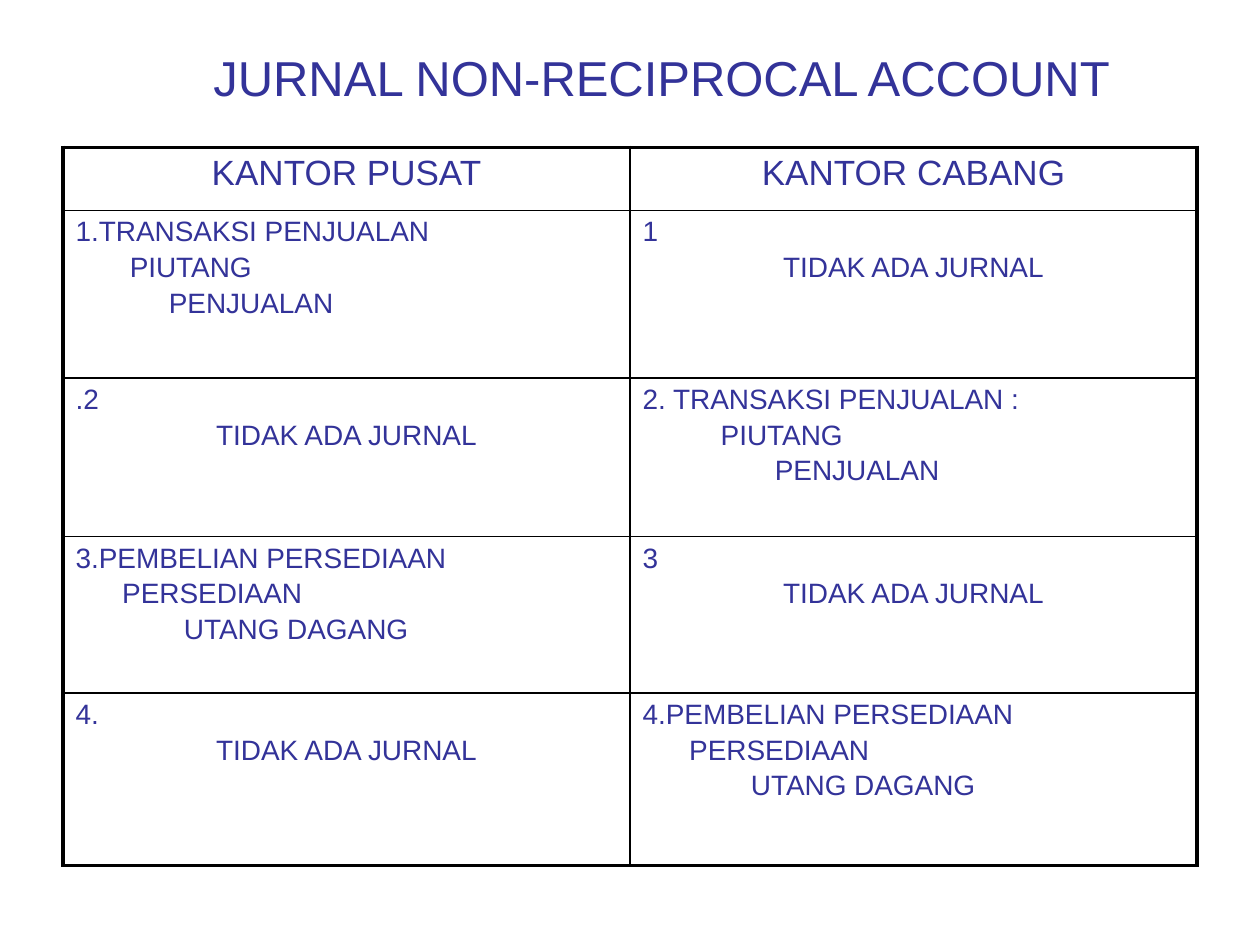
from dataclasses import dataclass

from lxml import etree
from pptx import Presentation
from pptx import util as u
from pptx.dml.color import RGBColor
from pptx.enum import text
from pptx.oxml import ns

INK = "333399"
BORDER = "000000"
FONT = "Arial"
OUTER, INNER = 2.25, 1
COLUMN_WIDTH = 4.5
ROW_HEIGHTS = (0.5, 1.33, 1.26, 1.24, 1.37)


@dataclass(frozen=True)
class Line:
    words: str
    indent: float = 0
    centered: bool = False
    size: int = 16


def header(words: str) -> list[Line]:
    return [Line(words, centered=True, size=20)]


def no_journal(number: str) -> list[Line]:
    return [Line(number), Line("TIDAK ADA JURNAL", centered=True)]


def sale(heading: str, debit_indent: float, credit_indent: float) -> list[Line]:
    return [Line(heading), Line("PIUTANG", debit_indent), Line("PENJUALAN", credit_indent)]


def purchase(heading: str) -> list[Line]:
    return [Line(heading), Line("PERSEDIAAN", 0.37), Line("UTANG DAGANG", 0.86)]


JOURNAL = [
    (header("KANTOR PUSAT"), header("KANTOR CABANG")),
    (sale("1.TRANSAKSI PENJUALAN", 0.43, 0.74), no_journal("1")),
    (no_journal(".2"), sale("2. TRANSAKSI PENJUALAN :", 0.62, 1.05)),
    (purchase("3.PEMBELIAN PERSEDIAAN"), no_journal("3")),
    (no_journal("4."), purchase("4.PEMBELIAN PERSEDIAAN")),
]


def color(value: str) -> RGBColor:
    return RGBColor.from_string(value)


def add_span(para, words: str, size: int) -> None:
    span = para.add_run()
    span.text = words
    span.font.name = FONT
    span.font.size = u.Pt(size)
    span.font.bold = False
    span.font.color.rgb = color(INK)


def write_cell(cell, lines: list[Line]) -> None:
    frame = cell.text_frame
    for index, line in enumerate(lines):
        para = frame.add_paragraph() if index else frame.paragraphs[0]
        para.alignment = text.PP_ALIGN.CENTER if line.centered else text.PP_ALIGN.LEFT
        if index:
            para.space_before = u.Pt(2.6)
        if line.indent:
            para._p.get_or_add_pPr().set("marL", str(u.Inches(line.indent)))
        add_span(para, line.words, line.size)


def set_borders(cell, widths: dict[str, float]) -> None:
    """Draw the sides L, R, T and B, in that order, with widths in points."""
    properties = cell._tc.get_or_add_tcPr()
    for side, width in widths.items():
        edge = etree.SubElement(properties, ns.qn(f"a:ln{side}"), w=str(u.Pt(width)))
        fill = etree.SubElement(edge, ns.qn("a:solidFill"))
        etree.SubElement(fill, ns.qn("a:srgbClr"), val=BORDER)


def add_title(slide, words: str) -> None:
    title = slide.shapes.title
    title.left, title.top = u.Inches(1), u.Inches(0.3)
    title.width, title.height = u.Inches(8.5), u.Inches(0.62)
    title.text_frame.vertical_anchor = text.MSO_ANCHOR.MIDDLE
    para = title.text_frame.paragraphs[0]
    para.alignment = text.PP_ALIGN.CENTER
    add_span(para, words, 28)


def add_journal(slide) -> None:
    row_count, column_count = len(JOURNAL), len(JOURNAL[0])
    table = slide.shapes.add_table(
        row_count, column_count, u.Inches(0.5), u.Inches(1.17),
        u.Inches(COLUMN_WIDTH * column_count), u.Inches(sum(ROW_HEIGHTS)),
    ).table
    table.first_row = table.horz_banding = False
    for row, height in zip(table.rows, ROW_HEIGHTS):
        row.height = u.Inches(height)
    for r, entries in enumerate(JOURNAL):
        for c, lines in enumerate(entries):
            cell = table.cell(r, c)
            write_cell(cell, lines)
            set_borders(cell, {
                "L": OUTER if c == 0 else INNER,
                "R": OUTER if c == column_count - 1 else INNER,
                "T": OUTER if r == 0 else INNER,
                "B": OUTER if r == row_count - 1 else INNER,
            })
            cell.fill.background()


def main() -> None:
    deck = Presentation()
    deck.slide_width, deck.slide_height = u.Inches(10), u.Inches(7.5)
    slide = deck.slides.add_slide(deck.slide_layouts.get_by_name("Title Only"))
    add_title(slide, "JURNAL NON-RECIPROCAL ACCOUNT")
    add_journal(slide)
    deck.save("out.pptx")


if __name__ == "__main__":
    main()
